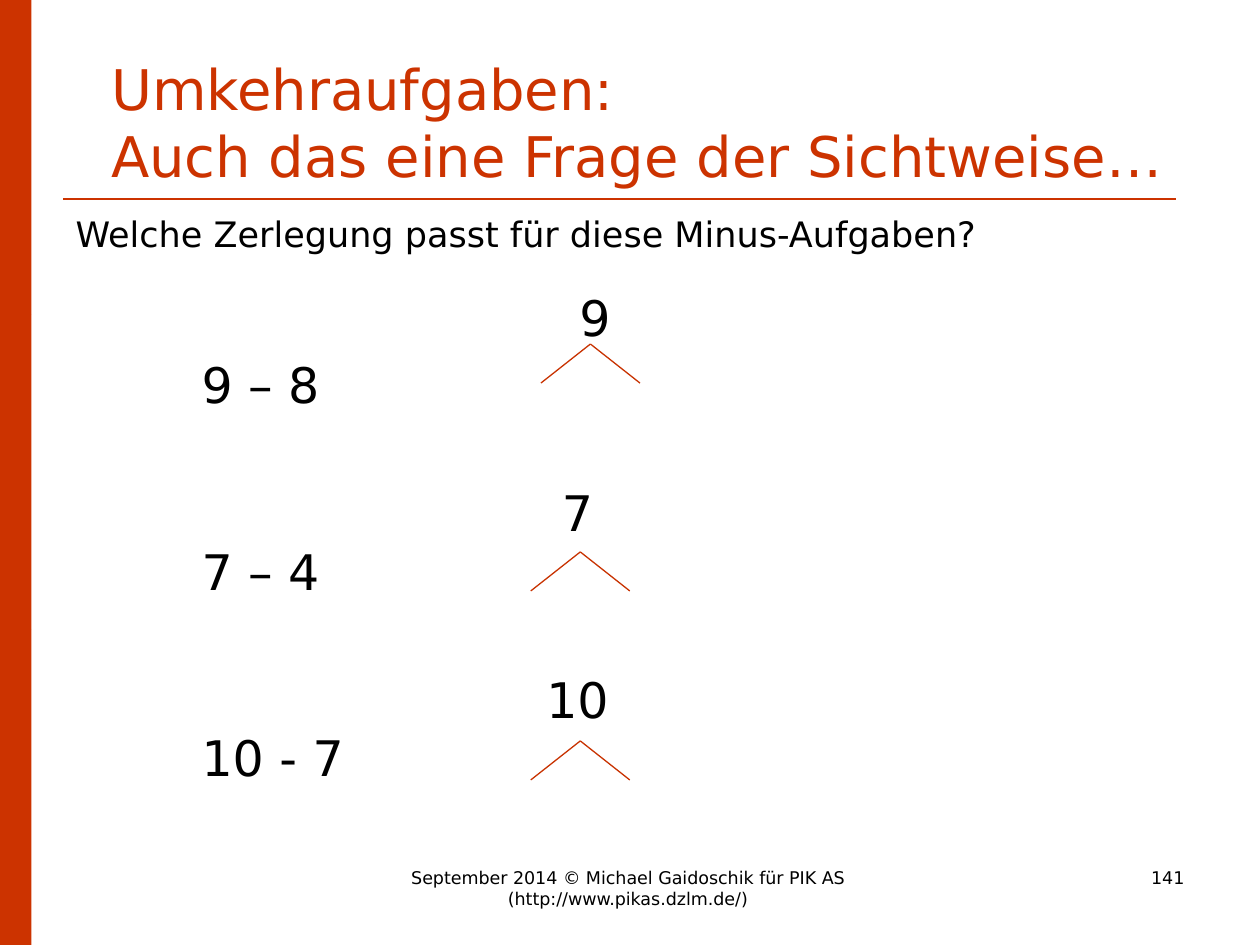
"""Build the slide on inverse tasks and matching number decompositions."""
import pptx
import pptx.dml.color
import pptx.enum.shapes
import pptx.enum.text
import pptx.oxml.ns
import pptx.util
from lxml import etree

Pt = pptx.util.Pt
ALIGN = pptx.enum.text.PP_ALIGN
ANCHOR = pptx.enum.text.MSO_ANCHOR
ACCENT = pptx.dml.color.RGBColor(0xCC, 0x33, 0x00)
BRANCH = pptx.dml.color.RGBColor(0xC8, 0x32, 0x00)
BLACK = pptx.dml.color.RGBColor(0x00, 0x00, 0x00)
WHITE = pptx.dml.color.RGBColor(0xFF, 0xFF, 0xFF)
FONT = "DejaVu Sans"
TASK_LEFT = 115.2
NUMBER_WIDTH = 60
BRANCH_WIDTH = 28.3
BRANCH_HEIGHT = 22.3

# task, task top, number, number centre, number top, branch peak x, branch peak y
DECOMPOSITIONS = [
    ("9 – 8", 202.5, "9", 340, 164.2, 337.4, 196.6),
    ("7 – 4", 309.5, "7", 330, 275.5, 331.6, 315.4),
    ("10 - 7", 415.8, "10", 330, 382.3, 331.6, 423.4),
]


def add_text(slide, text, left, top, width, height, size=28, color=BLACK,
             align=ALIGN.LEFT, anchor=ANCHOR.TOP):
    """Add a wrapping text box without margins."""
    frame = slide.shapes.add_textbox(Pt(left), Pt(top), Pt(width), Pt(height)).text_frame
    frame.word_wrap = True
    frame.vertical_anchor = anchor
    frame.margin_left = frame.margin_right = frame.margin_top = frame.margin_bottom = 0
    paragraph = frame.paragraphs[0]
    paragraph.text = text
    paragraph.alignment = align
    for run in paragraph.runs:
        run.font.name = FONT
        run.font.size = Pt(size)
        run.font.color.rgb = color


def add_line(slide, start, end, color, width):
    """Add a straight line without a shadow."""
    connector = slide.shapes.add_connector(
        pptx.enum.shapes.MSO_CONNECTOR.STRAIGHT, *map(Pt, (*start, *end)))
    connector.line.color.rgb = color
    connector.line.width = Pt(width)
    etree.SubElement(connector._element.spPr, pptx.oxml.ns.qn("a:effectLst"))


def add_bar(slide, top):
    """Add one section of the side bar."""
    shape = slide.shapes.add_shape(
        pptx.enum.shapes.MSO_SHAPE.RECTANGLE, 0, Pt(top), Pt(18), Pt(180))
    shape.shadow.inherit = False
    shape.fill.solid()
    shape.fill.fore_color.rgb = ACCENT
    shape.line.fill.background()


def add_decomposition(slide, task, task_top, number, center, number_top, peak_x, peak_y):
    """Add a minus task and its number with two branches below."""
    add_text(slide, task, TASK_LEFT, task_top, 150, 34)
    add_text(slide, number, center - NUMBER_WIDTH / 2, number_top, NUMBER_WIDTH, 34,
             align=ALIGN.CENTER)
    for side in (-1, 1):
        foot = (peak_x + side * BRANCH_WIDTH, peak_y + BRANCH_HEIGHT)
        add_line(slide, (peak_x, peak_y), foot, BRANCH, 0.75)


def main():
    """Build and save the slide."""
    presentation = pptx.Presentation()
    presentation.slide_width, presentation.slide_height = Pt(720), Pt(540)
    slide = presentation.slides.add_slide(presentation.slide_layouts[6])
    slide.background.fill.solid()
    slide.background.fill.fore_color.rgb = WHITE
    for index in range(3):
        add_bar(slide, index * 180)
    add_line(slide, (36, 113.8), (672, 113.8), ACCENT, 1.5)
    add_text(slide, "Umkehraufgaben:\vAuch das eine Frage der Sichtweise…",
             63.5, 25.2, 613, 82.8, size=32, color=ACCENT, anchor=ANCHOR.BOTTOM)
    add_text(slide, "Welche Zerlegung passt für diese Minus-Aufgaben?",
             43.2, 121.6, 633.6, 26, size=20)
    for decomposition in DECOMPOSITIONS:
        add_decomposition(slide, *decomposition)
    add_text(slide, "September 2014 © Michael Gaidoschik für PIK AS (http://www.pikas.dzlm.de/)",
             213, 495.4, 291.6, 28.8, size=10, align=ALIGN.CENTER)
    add_text(slide, "141", 523.4, 495.4, 153.4, 28.8, size=10, align=ALIGN.RIGHT)
    presentation.save("out.pptx")


if __name__ == "__main__":
    main()
